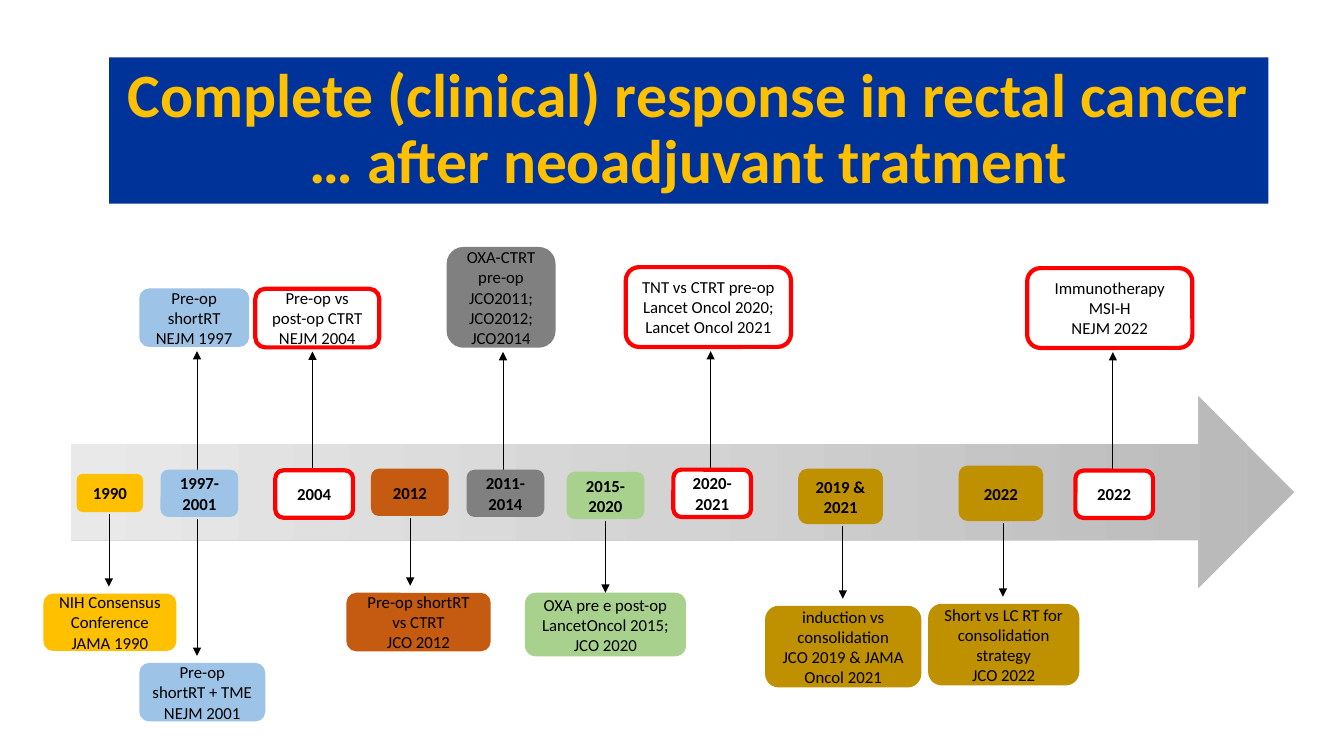
from copy import deepcopy

from lxml.etree import SubElement
from pptx import Presentation
from pptx.dml.color import RGBColor as RGB
from pptx.enum.shapes import MSO_CONNECTOR as LINK, MSO_SHAPE as SHAPE
from pptx.enum.text import MSO_ANCHOR as ANCHOR, MSO_AUTO_SIZE as SIZE, PP_ALIGN as ALIGN
from pptx.oxml.ns import qn
from pptx.util import Pt

FONT = "Calibri"
BLACK = RGB(0, 0, 0)
WHITE = RGB(255, 255, 255)
RED = RGB(255, 0, 0)
NAVY = RGB(0, 0x33, 0x99)
GOLD = RGB(0xFF, 0xC0, 0)
BLUE = RGB(0x9D, 0xC3, 0xE6)
RUST = RGB(0xC5, 0x5A, 0x11)
GREY = RGB(0x80, 0x80, 0x80)
GREEN = RGB(0xA9, 0xD1, 0x8E)
OCHRE = RGB(0xBF, 0x90, 0)
SHADES = [RGB(0xB8, 0xB8, 0xB8), RGB(0xD3, 0xD3, 0xD3), RGB(0xE9, 0xE9, 0xE9)]

EVENTS = [
    ("1990", GOLD, (54.7, 338.4, 47.5, 27.4), 77.8,
     [("NIH Consensus Conference\nJAMA 1990", (31, 424, 95, 41))]),
    ("1997-2001", BLUE, (114.7, 335.5, 55.5, 33.8), 140.7,
     [("Pre-op shortRT\nNEJM 1997", (99.5, 206, 78.5, 41.8)),
      ("Pre-op shortRT + TME\nNEJM 2001", (99.5, 473.5, 90, 41.8))]),
    ("2004", WHITE, (196.7, 336, 55.5, 33.8), 223.2,
     [("Pre-op vs post-op CTRT\nNEJM 2004", (182.4, 206.3, 88.5, 41.8))]),
    ("2012", RUST, (265, 334.8, 55.5, 33.8), 293,
     [("Pre-op shortRT vs CTRT\nJCO 2012", (247.5, 423.4, 103, 41.8))]),
    ("2011-2014", GREY, (333.3, 335.5, 55.5, 33.8), 359.3,
     [("OXA-CTRT pre-op\nJCO2011; JCO2012; JCO2014", (319, 176.4, 77.8, 72))]),
    ("2015-2020", GREEN, (404.75, 337, 55.5, 33.8), 432.5,
     [("OXA pre e post-op\nLancetOncol 2015; JCO 2020", (375, 423.4, 115, 45.4))]),
    ("2020-2021", WHITE, (481, 335.5, 55.5, 33.8), 507.6,
     [("TNT vs CTRT pre-op\nLancet Oncol 2020; Lancet Oncol 2021", (447, 190.8, 118, 57))]),
    ("2019 & 2021", OCHRE, (570.2, 334.8, 60.5, 39.6), 602,
     [("induction vs consolidation\nJCO 2019 & JAMA Oncol 2021", (546.5, 432.7, 111.6, 58.3))]),
    ("2022", OCHRE, (684.7, 332.6, 60.5, 39.6), 716.4,
     [("Short vs LC RT for consolidation strategy\nJCO 2022", (663, 431.3, 108, 58.3))]),
    ("2022", WHITE, (768.2, 336.2, 55.5, 33.8), 794.9,
     [("Immunotherapy MSI-H\nNEJM 2022", (733.7, 191.5, 118, 57))]),
]


def title(slide, box):
    """Format the title placeholder as a filled band."""
    band = slide.shapes.title
    band.left, band.top, band.width, band.height = map(Pt, box)
    band.fill.solid()
    band.fill.fore_color.rgb = NAVY
    frame = band.text_frame
    frame.text = "Complete (clinical) response in rectal cancer … after neoadjuvant tratment"
    frame.auto_size = SIZE.NONE
    frame.word_wrap = True
    frame.vertical_anchor = ANCHOR.MIDDLE
    para = frame.paragraphs[0]
    para.alignment = ALIGN.CENTER
    para.line_spacing = 0.9
    font = para.font
    font.name, font.size, font.bold = FONT, Pt(44), True
    font.color.rgb = GOLD


def axis(slide, box):
    """Draw the shaded time arrow."""
    shape = slide.shapes.add_shape(SHAPE.RIGHT_ARROW, *map(Pt, box))
    shape.shadow.inherit = False
    shape.line.fill.background()
    shape.fill.gradient()
    shape.fill.gradient_angle = 180
    stops = shape._element.spPr.find(".//" + qn("a:gsLst"))
    stops.append(deepcopy(stops[-1]))
    for num, (stop, shade) in enumerate(zip(shape.fill.gradient_stops, SHADES)):
        stop.position = num / 2
        stop.color.rgb = shade


def label(slide, box, text, fill, bold=False):
    """Draw a rounded label, outlined in red when it is white."""
    shape = slide.shapes.add_shape(SHAPE.ROUNDED_RECTANGLE, *map(Pt, box))
    shape.shadow.inherit = False
    shape.fill.solid()
    shape.fill.fore_color.rgb = fill
    if fill == WHITE:
        shape.line.color.rgb = RED
        shape.line.width = Pt(3)
    else:
        shape.line.fill.background()
    frame = shape.text_frame
    frame.text = text
    frame.word_wrap = True
    frame.vertical_anchor = ANCHOR.MIDDLE
    for para in frame.paragraphs:
        para.alignment = ALIGN.CENTER
        font = para.font
        font.name, font.size, font.bold = FONT, Pt(12), bold
        font.color.rgb = BLACK
    return shape


def arrow(slide, x, start, end):
    """Draw a thin vertical arrow."""
    line = slide.shapes.add_connector(LINK.STRAIGHT, *map(Pt, (x, start, x, end)))
    line.line.color.rgb = BLACK
    line.line.width = Pt(0.5)
    SubElement(line.line._get_or_add_ln(), qn("a:tailEnd"), type="triangle")
    SubElement(line._element.spPr, qn("a:effectLst"))
    return line


def event(slide, box, year, fill, x, notes):
    """Place a year in its box, with its notes above and below."""
    top, base = box[1], box[1] + box[3]
    for text, place in notes:
        note = label(slide, place, text, fill)
        if place[1] < top:
            arrow(slide, x, 350, place[1] + place[3] + 3)
        elif fill == GREEN:
            arrow(slide, x, base + 1.5, place[1]).end_connect(note, 0)
        else:
            arrow(slide, x, base + 1.5, place[1] - 5)
    label(slide, box, year, fill, True)


def main():
    """Build and save the slide."""
    deck = Presentation()
    deck.slide_width, deck.slide_height = Pt(960), Pt(540)
    slide = deck.slides.add_slide(deck.slide_layouts[5])
    title(slide, (78, 41, 828, 104.5))
    axis(slide, (50.5, 283, 874, 137))
    for year, fill, box, x, notes in EVENTS:
        event(slide, box, year, fill, x, notes)
    deck.save("out.pptx")


if __name__ == "__main__":
    main()
